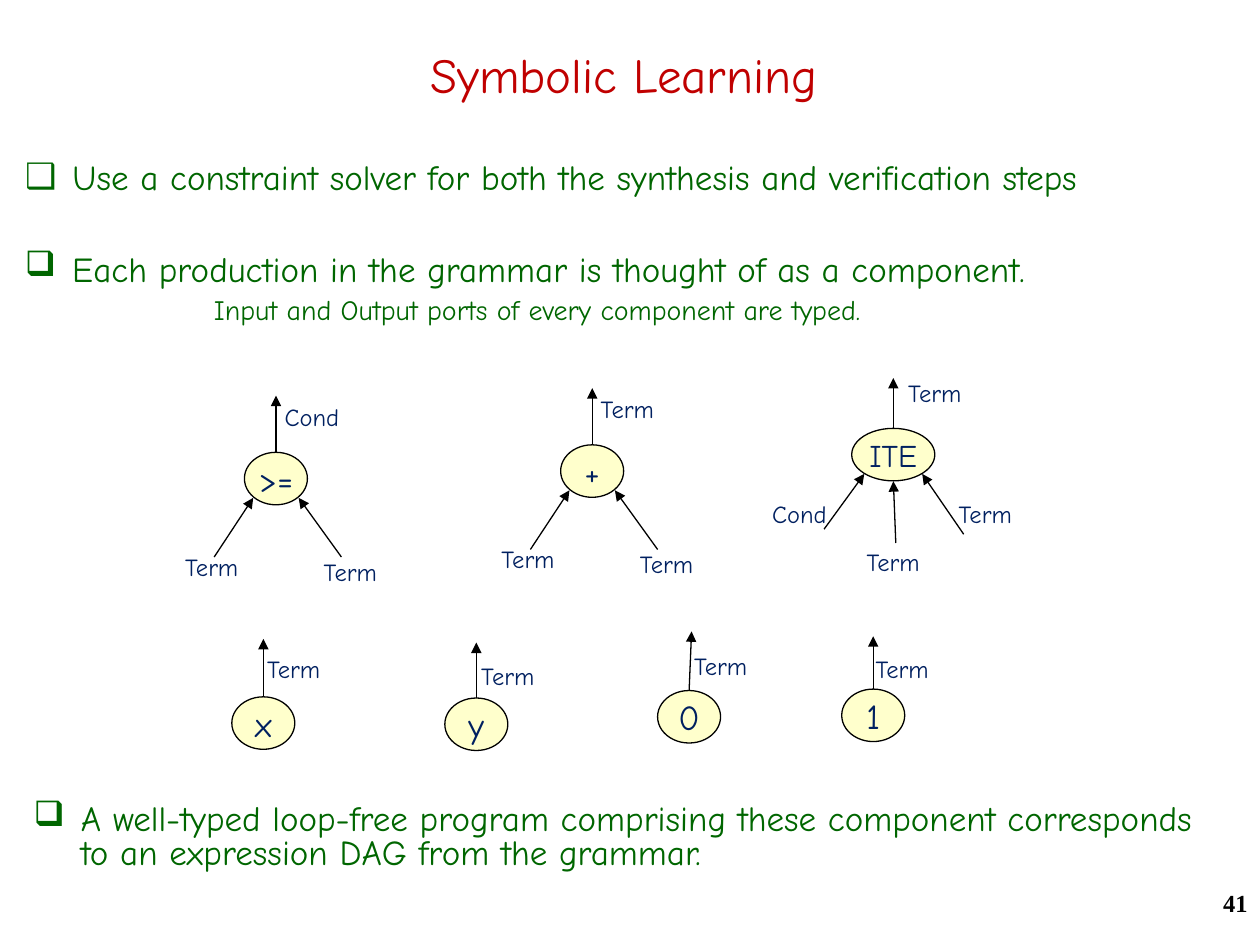
from lxml import etree
from pptx import Presentation
from pptx.dml.color import RGBColor
from pptx.enum.shapes import MSO_CONNECTOR, MSO_SHAPE
from pptx.enum.text import MSO_ANCHOR, MSO_AUTO_SIZE, PP_ALIGN
from pptx.oxml.ns import qn
from pptx.util import Pt

RED = RGBColor(0xC0, 0x00, 0x00)
GREEN = RGBColor(0x00, 0x66, 0x00)
NAVY = RGBColor(0x00, 0x20, 0x60)
CREAM = RGBColor(0xFF, 0xFF, 0xCC)
BLACK = RGBColor(0x00, 0x00, 0x00)
FONT = "Comic Neue"
STRAIGHT = MSO_CONNECTOR.STRAIGHT
ELLIPSE = MSO_SHAPE.OVAL
MIDDLE = MSO_ANCHOR.MIDDLE
CENTER, RIGHT = PP_ALIGN.CENTER, PP_ALIGN.RIGHT
NO_AUTOFIT = MSO_AUTO_SIZE.NONE
NODE_HEIGHT = 30


def write(para, text, size, color, name=FONT):
    para.text = text
    para.font.size = Pt(size)
    para.font.name = name
    para.font.color.rgb = color


def set_list_format(para, space_before, margin, hanging=0):
    para.line_spacing = 0.8
    para.space_before = Pt(space_before)
    properties = para._p.get_or_add_pPr()
    properties.set("marL", str(Pt(margin)))
    properties.set("indent", str(-Pt(hanging)))
    if hanging:
        bullet_color = etree.SubElement(properties, qn("a:buClr"))
        etree.SubElement(bullet_color, qn("a:srgbClr"), val=str(GREEN))
        etree.SubElement(properties, qn("a:buChar"), char="❑")


deck = Presentation()
deck.slide_width, deck.slide_height = Pt(720), Pt(540)
page = deck.slides.add_slide(deck.slide_layouts[1])

# Title
title = page.shapes.title
title.left, title.top, title.width, title.height = Pt(48), Pt(18), Pt(617), Pt(48)
title.text_frame.auto_size = NO_AUTOFIT
title.text_frame.vertical_anchor = MIDDLE
title_para = title.text_frame.paragraphs[0]
title_para.alignment = CENTER
write(title_para, "Symbolic Learning", 28, RED)

# Bulleted statements
body = page.placeholders[1]
body.left, body.top, body.width, body.height = Pt(7.2), Pt(90), Pt(720), Pt(38)
production_box = page.shapes.add_textbox(Pt(7.2), Pt(142.6), Pt(693), Pt(49))
program_box = page.shapes.add_textbox(Pt(12.2), Pt(456.5), Pt(693), Pt(49))
statements = [
    (body, "Use a constraint solver for both the synthesis and verification steps"),
    (production_box, "Each production in the grammar is thought of as a component."),
    (program_box, "A well-typed loop-free program comprising these component "
                  "corresponds to an expression DAG from the grammar."),
]
for box, text in statements:
    box.text_frame.word_wrap = True
    box.text_frame.auto_size = NO_AUTOFIT
    para = box.text_frame.paragraphs[0]
    write(para, text, 20, GREEN)
    set_list_format(para, 7, 27, 27)

ports_para = production_box.text_frame.add_paragraph()
write(ports_para, "Input and Output ports of every component are typed.", 16, GREEN)
set_list_format(ports_para, 5.6, 108)

# Ports: label, label offset, arrow start, arrow end, all from the node's corner
binary_inputs = [
    ("Term", (-41, 53.3), (-17.3, 59.8), (5, 26)),
    ("Term", (38.2, 56.2), (55.4, 59.8), (31, 26)),
]
choice_ports = [
    ("Term", (25.2, -32.4), (23.8, 0), (23.8, -28.8)),
    ("Cond", (-52.6, 36.7), (-15.8, 57.6), (7.2, 26)),
    ("Term", (1.4, 64.1), (25.2, 65.5), (23.8, 30.2)),
    ("Term", (54, 36.7), (64, 60.5), (40.3, 26)),
]

# Components: symbol, left, top, width, text size, ports
components = [
    ("ITE", 486.7, 244.8, 47.5, 18, choice_ports),
    (">=", 139.7, 258.5, 36, 20,
     binary_inputs + [("Cond", (15.8, -32.4), (18, 0), (18, -32.4))]),
    ("+", 320.4, 254.2, 36, 20,
     binary_inputs + [("Term", (15.8, -32.4), (18, 0), (18, -32.4))]),
    ("x", 132.5, 398.2, 36, 20, [("Term", (13, -28.1), (18, 0), (18, -33.1))]),
    ("y", 254.2, 398.9, 36, 20, [("Term", (13.7, -24.5), (18, 0), (18, -31.7))]),
    ("0", 375.8, 394.6, 36, 20, [("Term", (13.7, -25.9), (18, 0), (19.4, -33.8))]),
    ("1", 481, 393.8, 36, 20, [("Term", (12.2, -23.8), (18, 0), (18, -30.2))]),
]
for symbol, left, top, width, size, ports in components:
    group = page.shapes.add_group_shape()

    # Node
    node = group.shapes.add_shape(ELLIPSE, Pt(left), Pt(top), Pt(width), Pt(NODE_HEIGHT))
    node.shadow.inherit = False
    node.fill.solid()
    node.fill.fore_color.rgb = CREAM
    node.line.color.rgb = BLACK
    node.line.width = Pt(0.75)
    node.text_frame.word_wrap = False
    node.text_frame.vertical_anchor = MIDDLE
    node_para = node.text_frame.paragraphs[0]
    node_para.alignment = CENTER
    write(node_para, symbol, size, NAVY)

    # Typed ports
    for label, (label_x, label_y), (start_x, start_y), (end_x, end_y) in ports:
        arrow = group.shapes.add_connector(
            STRAIGHT, Pt(left + start_x), Pt(top + start_y),
            Pt(left + end_x), Pt(top + end_y))
        arrow.line.color.rgb = BLACK
        arrow.line.width = Pt(0.75)
        etree.SubElement(arrow.line._get_or_add_ln(), qn("a:tailEnd"), type="triangle")
        etree.SubElement(arrow._element.spPr, qn("a:effectLst"))

        label_width = 46 if label == "Cond" else 49.7
        label_box = group.shapes.add_textbox(
            Pt(left + label_x), Pt(top + label_y), Pt(label_width), Pt(24.5))
        label_box.text_frame.word_wrap = False
        write(label_box.text_frame.paragraphs[0], label, 14, NAVY)

# Page number
number_box = page.shapes.add_textbox(Pt(570), Pt(504), Pt(150), Pt(36))
number_box.text_frame.word_wrap = True
number_para = number_box.text_frame.paragraphs[0]
number_para.alignment = RIGHT
write(number_para, "41", 14, BLACK, "Times New Roman")
number_para.font.bold = True

deck.save("out.pptx")
